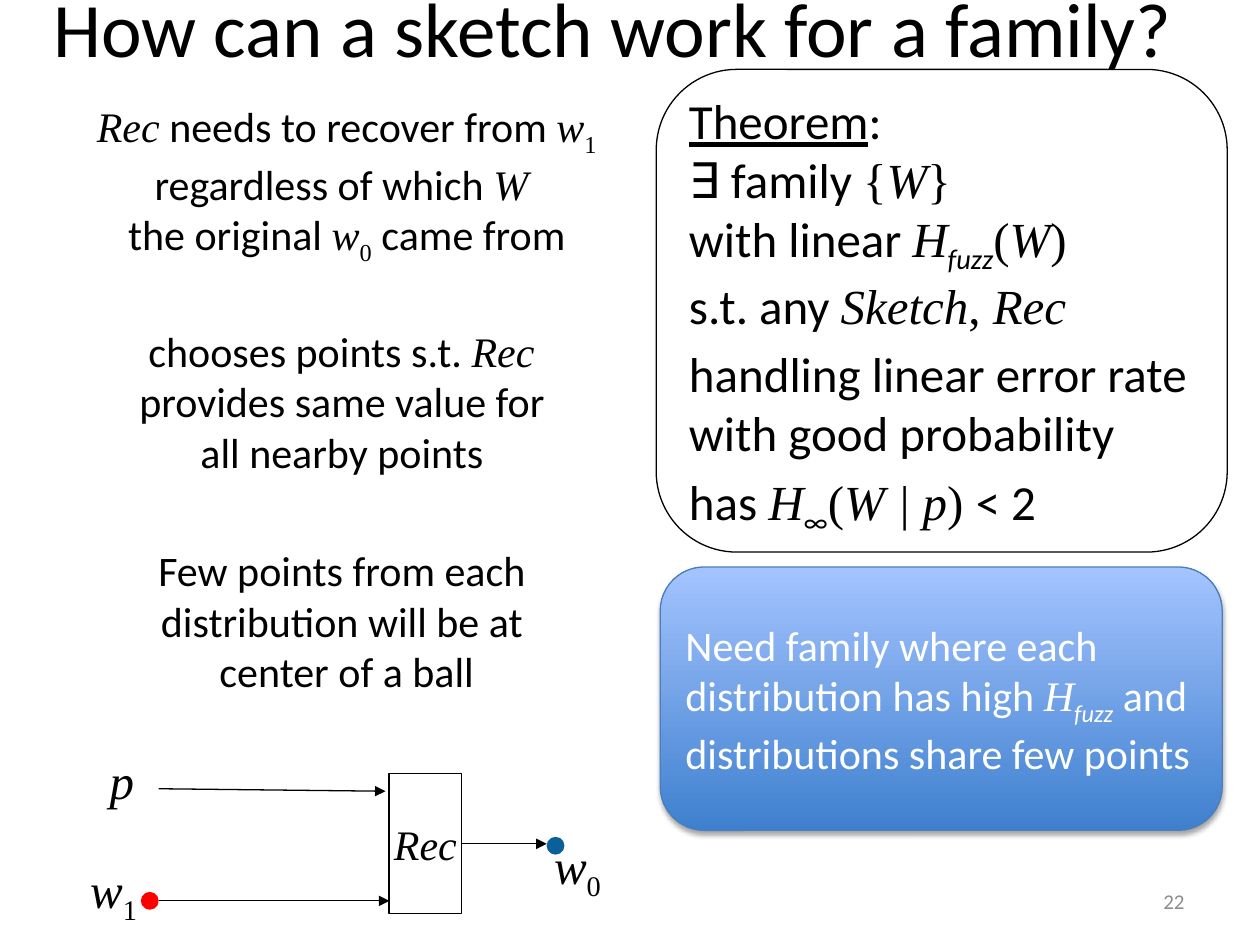
from dataclasses import dataclass
from typing import NamedTuple

from lxml.etree import SubElement
from pptx import Presentation
from pptx.dml.color import RGBColor
from pptx.enum.shapes import MSO_CONNECTOR, MSO_SHAPE
from pptx.enum.text import MSO_ANCHOR as Anchor, PP_ALIGN as Align
from pptx.oxml.ns import qn
from pptx.util import Cm, Pt

COLORS = {
    "black": "000000", "white": "FFFFFF", "gray": "8C8C8C",
    "red": "FF0000", "blue": "0B609A", "edge": "4B7EBC",
    "gradient_bottom": "3F80CE", "gradient_top": "A4C4FF",
}
RIGHT_SIDE = 3


class Style(NamedTuple):
    font: str = "Calibri"
    italic: bool = False
    underline: bool = False
    subscript: bool = False


PLAIN = Style()
UNDERLINED = Style(underline=True)
SERIF = Style("Times New Roman")
MATH = Style("Times New Roman", italic=True)
INDEX = Style("Times New Roman", subscript=True)
SYMBOL_INDEX = Style(subscript=True)
WORD_INDEX = Style(italic=True, subscript=True)


class Box(NamedTuple):
    left: float
    top: float
    width: float
    height: float

    def lengths(self) -> list:
        return [Cm(value) for value in self]


@dataclass
class Para:
    runs: list
    space_before: float = 0


@dataclass
class Label:
    box: Box
    paragraphs: list
    size: float
    color: str = "black"
    align: Align = Align.LEFT
    anchor: Anchor = Anchor.TOP


@dataclass
class Arrow:
    start: tuple
    end: tuple


H_FUZZ = [("H", MATH), ("fuzz", WORD_INDEX)]

THEOREM = [
    Para([("Theorem", UNDERLINED), (":\n∃ family ", PLAIN), ("{", SERIF), ("W", MATH),
          ("}\n", SERIF), ("with linear ", PLAIN), *H_FUZZ, ("(", SERIF), ("W", MATH),
          (")\n", SERIF), ("s.t. any ", PLAIN), ("Sketch", MATH), (", ", SERIF),
          ("Rec", MATH)], 5.6),
    Para([("handling linear error rate\nwith good probability", PLAIN)], 5.6),
    Para([("has ", PLAIN), ("H", MATH), ("∞", SYMBOL_INDEX), ("(", SERIF),
          ("W | p", MATH), (") ", SERIF), ("< 2", PLAIN)], 5.6),
]
REASONS = [
    Para([("Rec", MATH), (" needs to recover from ", PLAIN), ("w", MATH), ("1\n", INDEX),
          ("regardless of which ", PLAIN), ("W \n", MATH), ("the original ", PLAIN),
          ("w", MATH), ("0", INDEX), (" came from", PLAIN)], 4.8),
    Para([("chooses points s.t. ", PLAIN), ("Rec \n", MATH),
          ("provides same value for \nall nearby points ", PLAIN)], 34),
    Para([("Few points from each \ndistribution will be at \ncenter of a ball", PLAIN)], 39),
]
CONCLUSION = [
    Para([("Need family where each distribution has high ", PLAIN), *H_FUZZ,
          (" and distributions share few points", PLAIN)]),
]

LABELS = [
    Label(Box(-1.37, -0.66, 27.46, 2.39),
          [Para([("How can a sketch work for a family?", PLAIN)])],
          44, align=Align.CENTER, anchor=Anchor.MIDDLE),
    Label(Box(1.57, 17.2, 1.93, 1.45), [Para([("w", MATH), ("1", INDEX)])], 28),
    Label(Box(1.96, 15.01, 1.24, 1.45), [Para([("p", MATH)])], 28),
    Label(Box(10.92, 16.71, 1.93, 1.45), [Para([("w", MATH), ("0", INDEX)])], 28),
    Label(Box(13.64, 1.7, 11.81, 4.04), THEOREM, 28),
    Label(Box(0.36, 1.91, 13.26, 4.04), REASONS, 24, align=Align.CENTER),
    Label(Box(18.21, 17.65, 5.92, 1.02), [Para([("22", PLAIN)])],
          12, "gray", Align.RIGHT, Anchor.MIDDLE),
]
DOTS = {"red": Box(2.84, 17.98, 0.36, 0.36), "blue": Box(11.02, 16.87, 0.36, 0.36)}
PROBE_ARROW = Arrow((3.2, 15.9), (7.77, 15.95))
READING_ARROW = Arrow((3.2, 18.16), (7.85, 18.16))
OUTPUT_ARROW = Arrow((9.31, 17.01), (11.02, 17.01))


def rgb(name: str) -> RGBColor:
    return RGBColor.from_string(COLORS[name])


def write_text(frame, label: Label) -> None:
    frame.word_wrap = True
    frame.vertical_anchor = label.anchor
    for index, item in enumerate(label.paragraphs):
        paragraph = frame.add_paragraph() if index else frame.paragraphs[0]
        paragraph.alignment = label.align
        paragraph.space_before = Pt(item.space_before)
        for text, style in item.runs:
            for line, part in enumerate(text.split("\n")):
                if line:
                    paragraph.add_line_break()
                if part:
                    add_run(paragraph, part, style, label)


def add_run(paragraph, text: str, style: Style, label: Label) -> None:
    run = paragraph.add_run()
    run.text = text
    font = run.font
    font.name, font.size = style.font, Pt(label.size)
    font.italic, font.underline = style.italic, style.underline
    font.color.rgb = rgb(label.color)
    if style.subscript:
        run._r.get_or_add_rPr().set("baseline", "-25000")


def add_label(slide, label: Label) -> None:
    write_text(slide.shapes.add_textbox(*label.box.lengths()).text_frame, label)


def add_outline(slide, kind: MSO_SHAPE, box: Box, line: str = "black"):
    shape = slide.shapes.add_shape(kind, *box.lengths())
    shape.shadow.inherit = False
    shape.fill.background()
    shape.line.color.rgb = rgb(line)
    shape.line.width = Pt(0.75)
    return shape


def add_dot(slide, color: str, box: Box) -> None:
    dot = add_outline(slide, MSO_SHAPE.OVAL, box)
    dot.fill.solid()
    dot.fill.fore_color.rgb = rgb(color)
    dot.line.fill.background()


def add_arrow(slide, arrow: Arrow):
    points = [Cm(value) for value in (*arrow.start, *arrow.end)]
    connector = slide.shapes.add_connector(MSO_CONNECTOR.STRAIGHT, *points)
    connector.line.color.rgb = rgb("black")
    connector.line.width = Pt(0.75)
    SubElement(connector.line._get_or_add_ln(), qn("a:tailEnd"), type="triangle")
    SubElement(connector._element.spPr, qn("a:effectLst"))
    return connector


def add_conclusion(slide) -> None:
    """Draw the shaded panel with its gradient, soft shadow and text."""
    label = Label(Box(13.31, 11.43, 11.33, 5.31), CONCLUSION, 24, "white",
                  anchor=Anchor.MIDDLE)
    panel = add_outline(slide, MSO_SHAPE.ROUNDED_RECTANGLE, label.box, "edge")
    panel.fill.gradient()
    panel.fill.gradient_angle = 90
    for stop, name in zip(panel.fill.gradient_stops, ("gradient_bottom", "gradient_top")):
        stop.color.rgb = rgb(name)
    effects = panel._element.spPr.find(qn("a:effectLst"))
    shadow = SubElement(effects, qn("a:outerShdw"), blurRad=str(Pt(3.1)),
                        dist=str(Pt(1.8)), dir="5400000", rotWithShape="0")
    tint = SubElement(shadow, qn("a:srgbClr"), val=COLORS["black"])
    SubElement(tint, qn("a:alpha"), val="35000")
    write_text(panel.text_frame, label)


def add_recover_box(slide):
    label = Label(Box(7.84, 15.6, 1.47, 2.82), [Para([("Rec", MATH)])], 24,
                  align=Align.CENTER, anchor=Anchor.MIDDLE)
    shape = add_outline(slide, MSO_SHAPE.RECTANGLE, label.box)
    write_text(shape.text_frame, label)
    shape.text_frame.margin_left = shape.text_frame.margin_right = 0
    return shape


def main() -> None:
    presentation = Presentation()
    presentation.slide_width, presentation.slide_height = Cm(25.4), Cm(19.05)
    slide = presentation.slides.add_slide(presentation.slide_layouts[6])
    add_outline(slide, MSO_SHAPE.ROUNDED_RECTANGLE, Box(13.23, 1.4, 11.51, 9.73))
    recover_box = add_recover_box(slide)
    add_arrow(slide, PROBE_ARROW)
    add_arrow(slide, READING_ARROW)
    add_arrow(slide, OUTPUT_ARROW).begin_connect(recover_box, RIGHT_SIDE)
    for color, box in DOTS.items():
        add_dot(slide, color, box)
    for label in LABELS:
        add_label(slide, label)
    add_conclusion(slide)
    presentation.save("out.pptx")


if __name__ == "__main__":
    main()
